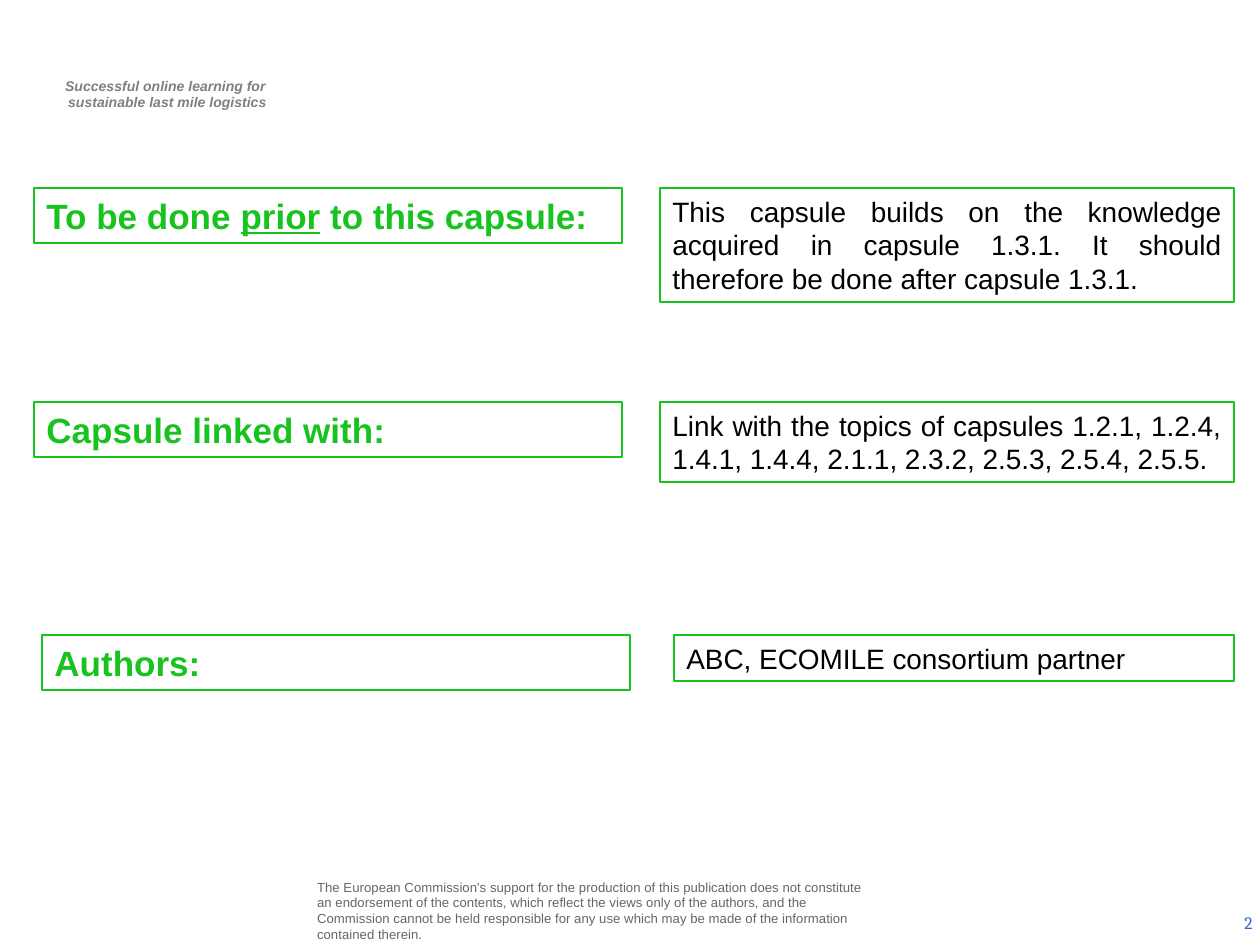
"""Build the capsule overview slide with its prerequisites, links and authors."""
from pptx import Presentation
from pptx.dml.color import RGBColor
from pptx.enum.shapes import MSO_SHAPE as Shape
from pptx.enum.text import MSO_ANCHOR as Anchor, PP_ALIGN as Align
from pptx.util import Pt

PX = 914400 / 126
HEX = {"green": "18C320", "white": "FFFFFF", "black": "000000",
       "grey": "7F7F7F", "dim": "666666", "blue": "3366CC"}


def place(box):
    return [round(n * PX) for n in box]


def write(shape, lines, size, color, align=Align.LEFT, anchor=Anchor.TOP,
          font="Arial", bold=False, italic=False):
    frame = shape.text_frame
    frame.word_wrap = True
    frame.vertical_anchor = anchor
    frame.text = "\n".join("".join(parts) for parts in lines)
    for para, parts in zip(frame.paragraphs, lines):
        para.alignment = align
        if len(parts) > 1:
            para.clear()
            for part in parts:
                para.add_run().text = part
        for run in para.runs:
            run.font.name, run.font.size = font, Pt(size)
            run.font.bold, run.font.italic = bold, italic
            run.font.color.rgb = RGBColor.from_string(HEX[color])
    return frame


deck = Presentation()
deck.slide_width, deck.slide_height = place((1260, 945))
slide = deck.slides.add_slide(deck.slide_layouts[6])
shapes = slide.shapes

head = shapes.add_textbox(*place((37, 71, 256, 47)))
frame = write(head, [["Successful online learning for "],
                     ["sustainable last mile logistics"]],
              8, "grey", Align.CENTER, bold=True, italic=True)
for para in frame.paragraphs:
    para._p.get_or_add_pPr().set("marL", str(round(5 * PX)))

note = shapes.add_textbox(*place((312, 879, 572, 63)))
frame = write(note, [["The European Commission's support for the production of this "
                      "publication does not constitute an endorsement of the contents, "
                      "which reflect the views only of the authors, and the Commission "
                      "cannot be held responsible for any use which may be made of the "
                      "information contained therein."]],
              7.5, "dim", anchor=Anchor.MIDDLE)
frame.margin_left = frame.margin_right = round(5 * PX)
frame.margin_top = frame.margin_bottom = round(5 * PX)

page = shapes.add_textbox(*place((971, 898, 294, 50)))
write(page, [["2"]], 10, "blue", Align.RIGHT, Anchor.MIDDLE, "Cambria")

rows = [
    (188, 34, ["To be done ", "prior", " to this capsule:"], 660, 574, 114, Align.JUSTIFY,
     "This capsule builds on the knowledge acquired in capsule 1.3.1. "
     "It should therefore be done after capsule 1.3.1."),
    (402, 34, ["Capsule linked with:"], 660, 574, 80, Align.JUSTIFY,
     "Link with the topics of capsules 1.2.1, 1.2.4, 1.4.1, 1.4.4, "
     "2.1.1, 2.3.2, 2.5.3, 2.5.4, 2.5.5."),
    (635, 42, ["Authors:"], 674, 560, 46, Align.LEFT,
     "ABC, ECOMILE consortium partner"),
]
for top, left, label, start, width, height, align, text in rows:
    cells = [((left, top, 588, 55), label, 20, "green", Align.LEFT, True),
             ((start, top, width, height), [text], 16, "black", align, False)]
    for box, parts, size, color, side, bold in cells:
        card = shapes.add_shape(Shape.RECTANGLE, *place(box))
        card.shadow.inherit = False
        card.fill.solid()
        card.fill.fore_color.rgb = RGBColor.from_string(HEX["white"])
        card.line.color.rgb = RGBColor.from_string(HEX["green"])
        card.line.width = Pt(0.75)
        frame = write(card, [parts], size, color, side, bold=bold)
        for run in frame.paragraphs[0].runs:
            if run.text == "prior":
                run.font.underline = True

deck.save("out.pptx")
